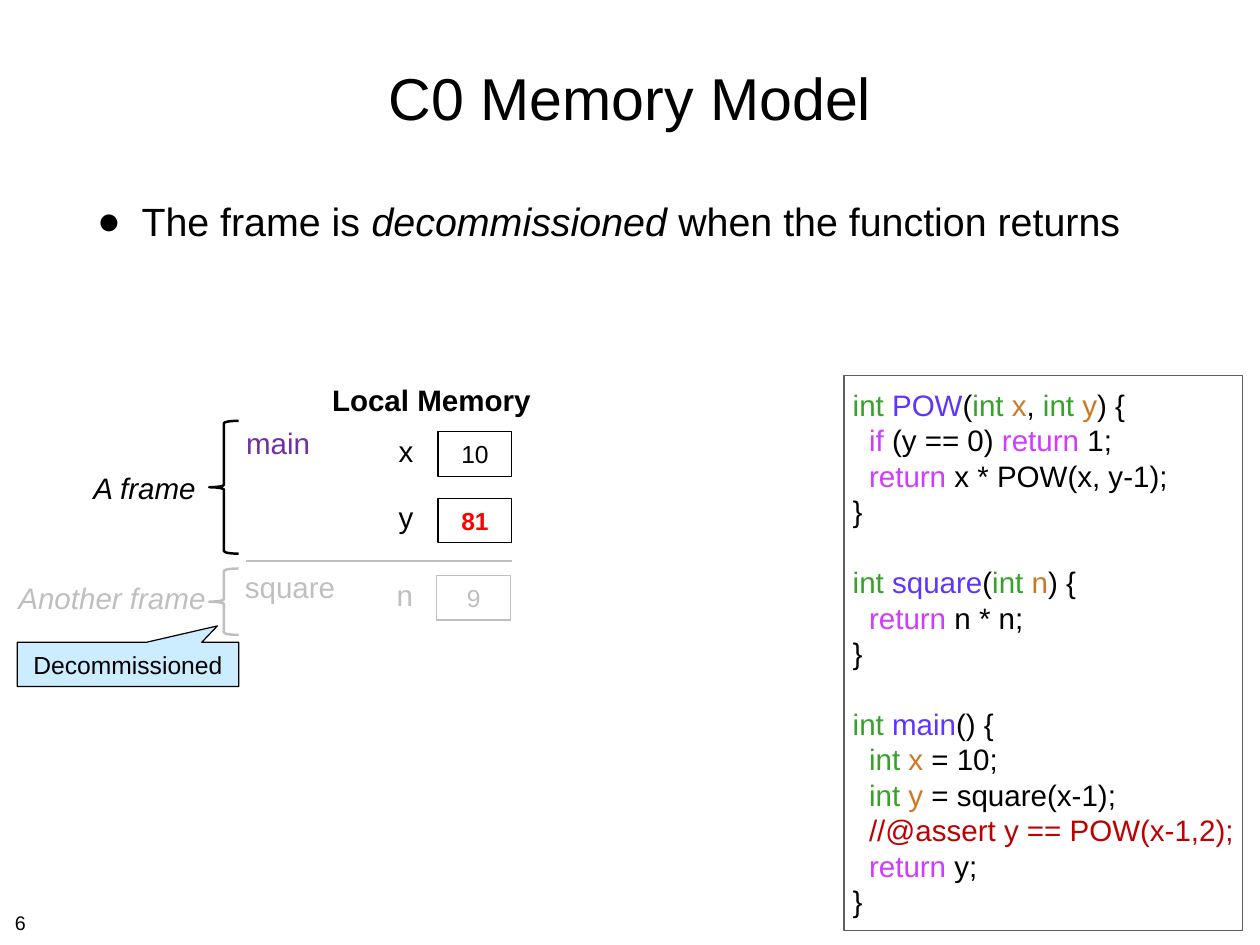
from lxml import etree
from pptx import Presentation
from pptx.dml.color import RGBColor
from pptx.enum.shapes import MSO_CONNECTOR, MSO_SHAPE
from pptx.enum.text import MSO_ANCHOR, MSO_AUTO_SIZE, PP_ALIGN
from pptx.oxml.ns import qn
from pptx.util import Pt

# The slide is a grid of 1024 columns by 768 rows, one point each
COLS, ROWS = 1024, 768
FONT = "Arial"

LEFT, CENTER, RIGHT = PP_ALIGN.LEFT, PP_ALIGN.CENTER, PP_ALIGN.RIGHT
TOP, MIDDLE = MSO_ANCHOR.TOP, MSO_ANCHOR.MIDDLE
NO_AUTOFIT = MSO_AUTO_SIZE.NONE
RECTANGLE, BRACE = MSO_SHAPE.RECTANGLE, MSO_SHAPE.LEFT_BRACE
CALLOUT, STRAIGHT = MSO_SHAPE.RECTANGULAR_CALLOUT, MSO_CONNECTOR.STRAIGHT

BLACK = RGBColor(0x00, 0x00, 0x00)
GONE = RGBColor(0xBF, 0xBF, 0xBF)
RED = RGBColor(0xFF, 0x00, 0x00)
PURPLE = RGBColor(0x70, 0x30, 0xA0)
PALE_BLUE = RGBColor(0xCC, 0xEC, 0xFF)
CODE_BORDER = RGBColor(0x5E, 0x5E, 0x5E)
TYPE = RGBColor(0x34, 0xA3, 0x27)
FUNCTION = RGBColor(0x5E, 0x34, 0xFF)
VARIABLE = RGBColor(0xCD, 0x79, 0x23)
KEYWORD = RGBColor(0xD0, 0x3B, 0xFF)
CONTRACT = RGBColor(0xC0, 0x00, 0x00)

INT = ("int ", TYPE)
RETURN = ("return", KEYWORD)
END = (0, [("}", BLACK)])

# Each function is a list of lines: indent level and coloured pieces
PROGRAM = [
    [
        (0, [INT, ("POW", FUNCTION), ("(", BLACK), INT, ("x", VARIABLE),
             (", ", BLACK), INT, ("y", VARIABLE), (") {", BLACK)]),
        (1, [("if", KEYWORD), (" (y == 0) ", BLACK), RETURN, (" 1;", BLACK)]),
        (1, [RETURN, (" x * POW(x, y-1);", BLACK)]),
        END,
    ],
    [
        (0, [INT, ("square", FUNCTION), ("(", BLACK), INT, ("n", VARIABLE),
             (") {", BLACK)]),
        (1, [RETURN, (" n * n;", BLACK)]),
        END,
    ],
    [
        (0, [INT, ("main", FUNCTION), ("() {", BLACK)]),
        (1, [INT, ("x", VARIABLE), (" = 10;", BLACK)]),
        (1, [INT, ("y", VARIABLE), (" = square(x-1);", BLACK)]),
        (1, [("//@assert y == POW(x-1,2);", CONTRACT)]),
        (1, [RETURN, (" y;", BLACK)]),
        END,
    ],
]


def format_run(run, size, color=BLACK, bold=False, italic=False):
    font = run.font
    font.name, font.size = FONT, Pt(size)
    font.bold, font.italic = bold, italic
    font.color.rgb = color


def format_frame(frame, anchor=MIDDLE, inset=4):
    frame.word_wrap = True
    frame.auto_size = NO_AUTOFIT
    frame.vertical_anchor = anchor
    frame.margin_left = frame.margin_right = Pt(inset)
    frame.margin_top = frame.margin_bottom = Pt(inset)


def write(frame, text, size=24, align=CENTER, anchor=MIDDLE, **style):
    frame.text = text
    format_frame(frame, anchor)
    paragraph = frame.paragraphs[0]
    paragraph.alignment = align
    format_run(paragraph.runs[0], size, **style)


def add_label(slide, box, text, **style):
    label = slide.shapes.add_textbox(*map(Pt, box))
    write(label.text_frame, text, **style)


def add_outline(slide, kind, box, color, width=1, fill=None):
    outline = slide.shapes.add_shape(kind, *map(Pt, box))
    outline.shadow.inherit = False
    outline.line.color.rgb = color
    outline.line.width = Pt(width)
    if fill is None:
        outline.fill.background()
    else:
        outline.fill.solid()
        outline.fill.fore_color.rgb = fill
    return outline


def set_title(slide, box, text):
    title = slide.shapes.title
    title.left, title.top, title.width, title.height = map(Pt, box)
    write(title.text_frame, text, size=48)


def add_statement(slide, box, pieces):
    """Bulleted sentence; pieces are (text, italic)."""
    frame = slide.shapes.add_textbox(*map(Pt, box)).text_frame
    format_frame(frame, TOP)
    paragraph = frame.paragraphs[0]
    paragraph.space_before = Pt(8)
    for text, italic in pieces:
        run = paragraph.add_run()
        run.text = text
        format_run(run, 32, italic=italic)
    properties = paragraph._p.get_or_add_pPr()
    properties.set("marL", str(Pt(36)))
    properties.set("indent", str(-Pt(36)))
    etree.SubElement(properties, qn("a:buFont")).set("typeface", FONT)
    etree.SubElement(properties, qn("a:buChar")).set("char", "●")


def add_code(slide, box, program):
    line_height, indent = 28.8, 13.3
    frame = add_outline(slide, RECTANGLE, box, CODE_BORDER).text_frame
    format_frame(frame, inset=7)
    lines = [(level, pieces, number > 0 and row == 0)
             for number, function in enumerate(program)
             for row, (level, pieces) in enumerate(function)]
    for index, (level, pieces, gap_above) in enumerate(lines):
        paragraph = frame.add_paragraph() if index else frame.paragraphs[0]
        paragraph.alignment = LEFT
        paragraph.line_spacing = Pt(line_height)
        paragraph.space_before = Pt(line_height if gap_above else 0)
        properties = paragraph._p.get_or_add_pPr()
        properties.set("marL", str(Pt(indent * level)))
        properties.set("indent", "0")
        for text, color in pieces:
            run = paragraph.add_run()
            run.text = text
            format_run(run, 24, color)


def add_memory_frame(slide, box, caption, name, variables, color,
                     name_color, caption_gap, shift=(0, 0)):
    """Brace with caption, function name and one cell per variable."""
    left, top, width, height = box
    brace_w, cell_w, cell_h, pitch = 24, 60, 36, 54
    dx, dy = shift
    brace = add_outline(slide, BRACE, (left, top, brace_w, height), color, 2)
    brace.adjustments[0] = 0.083

    caption_w = 168
    add_label(slide, (left - caption_gap - caption_w,
                      top + dy + (height - cell_h) / 2, caption_w, cell_h),
              caption, align=RIGHT, color=color, italic=True)
    add_label(slide, (left + brace_w + dx + 2, top + dy, 96, cell_h),
              name, align=LEFT, color=name_color)

    cell_left = left + width - cell_w + dx
    for row, (variable, value, value_color, bold) in enumerate(variables):
        cell_top = top + dy + (pitch - cell_h) / 2 + row * pitch
        add_label(slide, (cell_left - 41, cell_top - 3, 30, cell_h),
                  variable, color=color)
        cell = add_outline(slide, RECTANGLE,
                           (cell_left, cell_top, cell_w, cell_h), color)
        write(cell.text_frame, value, size=20, color=value_color, bold=bold)


def add_local_memory(slide, box):
    left, top, width, _ = box
    add_label(slide, (left + 95, top, 171, 37), "Local Memory", bold=True)
    add_memory_frame(slide, (left, top + 36, width, 108), "A frame", "main",
                     [("x", "10", BLACK, False), ("y", "81", RED, True)],
                     BLACK, PURPLE, caption_gap=7)
    add_memory_frame(slide, (left, top + 156, width, 54), "Another frame",
                     "square", [("n", "9", GONE, False)],
                     GONE, GONE, caption_gap=-1, shift=(-1, -3))

    # Line between the two frames
    divider = slide.shapes.add_connector(
        STRAIGHT, Pt(left + 30), Pt(top + 150), Pt(left + width), Pt(top + 150))
    divider.line.color.rgb = GONE
    divider.line.width = Pt(2)
    etree.SubElement(divider._element.spPr, qn("a:effectLst"))

    # Callout on the returned function's frame
    callout = add_outline(slide, CALLOUT, (left - 156, top + 216, 180, 36),
                          BLACK, fill=PALE_BLUE)
    callout.adjustments[0], callout.adjustments[1] = 0.404, -0.87
    write(callout.text_frame, "Decommissioned", size=20)


def main():
    deck = Presentation()
    deck.slide_width, deck.slide_height = Pt(COLS), Pt(ROWS)
    slide = deck.slides.add_slide(deck.slide_layouts[5])
    set_title(slide, (75, 20, 874, 118), "C0 Memory Model")
    add_statement(slide, (75, 156, 874, 132),
                  [("The frame is ", False), ("decommissioned", True),
                   (" when the function returns", False)])
    add_local_memory(slide, (170, 306, 246, 252))
    add_code(slide, (686, 305, 324, 451), PROGRAM)
    add_label(slide, (8, 736, 27, 25), "6", size=16, align=LEFT, anchor=TOP)
    deck.save("out.pptx")


if __name__ == "__main__":
    main()
